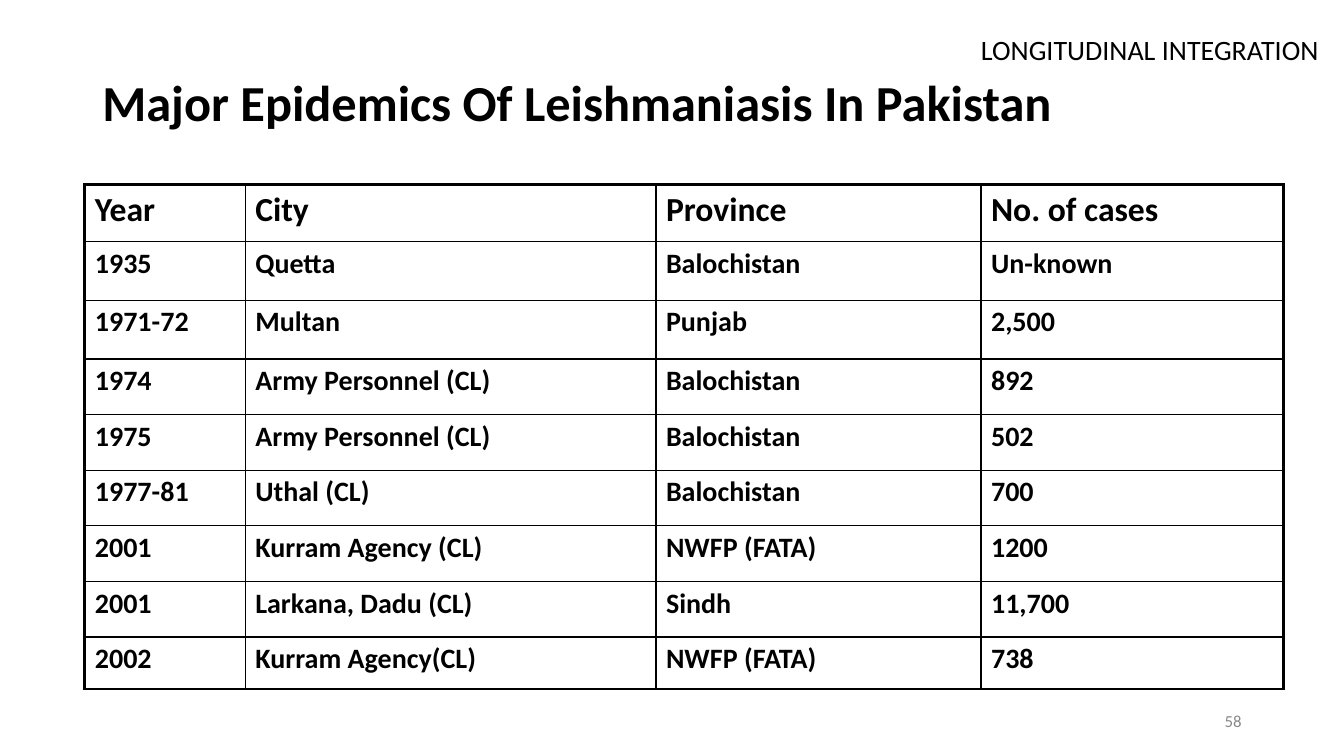
from dataclasses import dataclass

from lxml.etree import SubElement
from pptx import Presentation
from pptx.dml.color import RGBColor
from pptx.enum.text import MSO_ANCHOR as Anchor, PP_ALIGN as Align
from pptx.oxml.ns import qn
from pptx.slide import Slide
from pptx.table import _Cell as Cell
from pptx.text.text import _Paragraph as Paragraph
from pptx.util import Emu, Inches, Pt

SLIDE_WIDTH, SLIDE_HEIGHT = Inches(13.33), Inches(7.5)
GRID_COLUMNS, GRID_ROWS = 160, 90
COLORS = {"black": "000000", "gray": "888888", "white": "FFFFFF"}
FONT = "Calibri"

THIN, THICK = Pt(1), Pt(2.25)
TABLE_LEFT, TABLE_TOP = 10.1, 22
COLUMN_WIDTHS = [19.1, 48.9, 38.7, 36]
ROW_HEIGHTS = [6.74, 7, 7, *[6.62] * 5, 6.2]
EPIDEMICS = [
    ("Year", "City", "Province", "No. of cases"),
    ("1935", "Quetta", "Balochistan", "Un-known"),
    ("1971-72", "Multan", "Punjab", "2,500"),
    ("1974", "Army Personnel (CL)", "Balochistan", "892"),
    ("1975", "Army Personnel (CL)", "Balochistan", "502"),
    ("1977-81", "Uthal (CL)", "Balochistan", "700"),
    ("2001", "Kurram Agency (CL)", "NWFP (FATA)", "1200"),
    ("2001", "Larkana, Dadu (CL)", "Sindh", "11,700"),
    ("2002", "Kurram Agency(CL)", "NWFP (FATA)", "738"),
]


@dataclass(frozen=True)
class TextStyle:
    size: int
    bold: bool = False
    color: str = "black"
    align: Align = Align.LEFT
    line_spacing: float = 1.0


@dataclass(frozen=True)
class Label:
    text: str
    left: float
    top: float
    width: float
    height: float
    style: TextStyle
    frame: dict


MIDDLE = {"vertical_anchor": Anchor.MIDDLE}
FLUSH = {"margin_left": 0, "margin_right": 0, "margin_top": Inches(0.01), "margin_bottom": 0}
LABELS = [
    Label("Major Epidemics Of Leishmaniasis In Pakistan", 11, 3.84, 138, 17.4,
          TextStyle(36, bold=True, line_spacing=0.9), MIDDLE),
    Label("58", 113, 83.4, 36, 4.8, TextStyle(12, color="gray", align=Align.RIGHT), MIDDLE),
    Label("LONGITUDINAL INTEGRATION", 106, 3.7, 51, 4.2,
          TextStyle(20, align=Align.RIGHT), FLUSH),
]
HEADING, ENTRY = TextStyle(24, bold=True), TextStyle(20, bold=True)


def across(columns: float) -> Emu:
    return Emu(round(SLIDE_WIDTH * columns / GRID_COLUMNS))


def down(rows: float) -> Emu:
    return Emu(round(SLIDE_HEIGHT * rows / GRID_ROWS))


def set_attributes(target: object, values: dict) -> None:
    for name, value in values.items():
        setattr(target, name, value)


def write(paragraph: Paragraph, text: str, style: TextStyle) -> None:
    set_attributes(paragraph, {"alignment": style.align, "line_spacing": style.line_spacing})
    run = paragraph.add_run()
    run.text = text
    set_attributes(run.font, {"name": FONT, "size": Pt(style.size), "bold": style.bold})
    run.font.color.rgb = RGBColor.from_string(COLORS[style.color])


def draw_label(slide: Slide, label: Label) -> None:
    box = slide.shapes.add_textbox(across(label.left), down(label.top),
                                   across(label.width), down(label.height))
    set_attributes(box.text_frame, {"word_wrap": True, **label.frame})
    write(box.text_frame.paragraphs[0], label.text, label.style)


def draw_borders(cell: Cell, widths: dict[str, Emu]) -> None:
    """Draw cell edges; they must precede the fill in the cell's XML."""
    properties = cell._tc.get_or_add_tcPr()
    for edge, width in widths.items():
        line = SubElement(properties, qn(f"a:{edge}"), w=str(int(width)))
        fill = SubElement(line, qn("a:solidFill"))
        SubElement(fill, qn("a:srgbClr"), val=COLORS["black"])


def draw_table(slide: Slide) -> None:
    last_row, last_column = len(ROW_HEIGHTS) - 1, len(COLUMN_WIDTHS) - 1
    table = slide.shapes.add_table(
        len(ROW_HEIGHTS), len(COLUMN_WIDTHS), across(TABLE_LEFT), down(TABLE_TOP),
        across(sum(COLUMN_WIDTHS)), down(sum(ROW_HEIGHTS))).table
    set_attributes(table, {"first_row": False, "horz_banding": False})
    for column, width in zip(table.columns, COLUMN_WIDTHS):
        column.width = across(width)
    for row, height in zip(table.rows, ROW_HEIGHTS):
        row.height = down(height)
    for row, entries in enumerate(EPIDEMICS):
        for column, text in enumerate(entries):
            cell = table.cell(row, column)
            write(cell.text_frame.paragraphs[0], text, ENTRY if row else HEADING)
            draw_borders(cell, {
                "lnL": THICK if column == 0 else THIN,
                "lnR": THICK if column == last_column else THIN,
                "lnT": THICK if row == 0 else THIN,
                "lnB": THICK if row == last_row else THIN,
            })
            cell.fill.background()


def main() -> None:
    presentation = Presentation()
    set_attributes(presentation, {"slide_width": SLIDE_WIDTH, "slide_height": SLIDE_HEIGHT})
    slide = presentation.slides.add_slide(presentation.slide_layouts[6])
    slide.background.fill.solid()
    slide.background.fill.fore_color.rgb = RGBColor.from_string(COLORS["white"])
    for label in LABELS:
        draw_label(slide, label)
    draw_table(slide)
    presentation.save("out.pptx")


if __name__ == "__main__":
    main()
